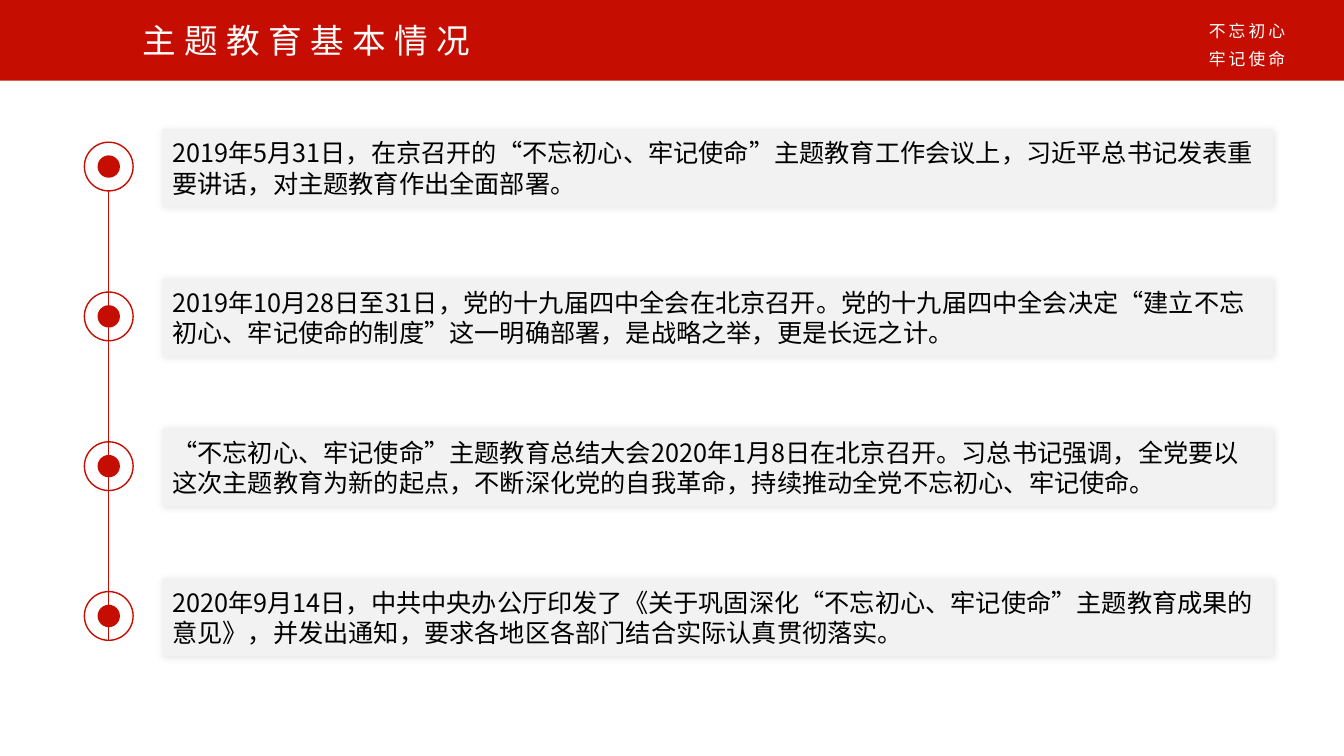
from lxml import etree
from pptx import Presentation
from pptx.dml.color import RGBColor
from pptx.enum.shapes import MSO_CONNECTOR, MSO_SHAPE
from pptx.enum.text import MSO_ANCHOR, MSO_AUTO_SIZE, PP_ALIGN
from pptx.oxml.ns import qn
from pptx.util import Pt

TITLE = "主题教育基本情况"
SLOGAN = ["不忘初心", "牢记使命"]
EVENTS = [
    "2019年5月31日，在京召开的“不忘初心、牢记使命”主题教育工作会议上，习近平总书记发表重要讲话，对主题教育作出全面部署。",
    "2019年10月28日至31日，党的十九届四中全会在北京召开。党的十九届四中全会决定“建立不忘初心、牢记使命的制度”这一明确部署，是战略之举，更是长远之计。",
    "“不忘初心、牢记使命”主题教育总结大会2020年1月8日在北京召开。习总书记强调，全党要以这次主题教育为新的起点，不断深化党的自我革命，持续推动全党不忘初心、牢记使命。",
    "2020年9月14日，中共中央办公厅印发了《关于巩固深化“不忘初心、牢记使命”主题教育成果的意见》，并发出通知，要求各地区各部门结合实际认真贯彻落实。",
]

FONT = "Noto Sans CJK SC"
RED = RGBColor(0xC5, 0x0E, 0x01)
GREY = RGBColor(0xF2, 0xF2, 0xF2)
WHITE = RGBColor(0xFF, 0xFF, 0xFF)
BLACK = RGBColor(0, 0, 0)
RECT, OVAL = MSO_SHAPE.RECTANGLE, MSO_SHAPE.OVAL
STRAIGHT = MSO_CONNECTOR.STRAIGHT
LEFT, MIDDLE, TOP = PP_ALIGN.LEFT, MSO_ANCHOR.MIDDLE, MSO_ANCHOR.TOP
NO_AUTOFIT = MSO_AUTO_SIZE.NONE

SLIDE_W, SLIDE_H = 960, 540
HEADER_H = 57.6
RING, DOT = 34.8, 16
AXIS_X = 77.7
CARD_X, CARD_W, CARD_H = 116, 793.5, 55.6
FIRST_Y, PITCH = 92.2, 107
RING_DY = 9.4  # ring top below card top


def write(sp, lines, size, color, spacing=0, line_height=None, anchor=MIDDLE):
    tf = sp.text_frame
    tf.word_wrap = True
    tf.auto_size = NO_AUTOFIT
    tf.vertical_anchor = anchor
    for i, line in enumerate(lines):
        p = tf.paragraphs[0] if i == 0 else tf.add_paragraph()
        p.alignment = LEFT
        if line_height:
            p.line_spacing = Pt(line_height)
        r = p.add_run()
        r.text = line
        r.font.size = Pt(size)
        r.font.color.rgb = color
        r.font.name = FONT
        rPr = r.font._element
        rPr.set("lang", "zh-CN")
        if spacing:
            rPr.set("spc", str(round(spacing * 100)))
        etree.SubElement(rPr, qn("a:ea")).set("typeface", FONT)


def add_shape(shapes, kind, x, y, w, h, fill=None, line=None):
    sp = shapes.add_shape(kind, Pt(x), Pt(y), Pt(w), Pt(h))
    sp.shadow.inherit = False
    if fill is None:
        sp.fill.background()
    else:
        sp.fill.solid()
        sp.fill.fore_color.rgb = fill
    if line is None:
        sp.line.fill.background()
    else:
        sp.line.color.rgb = line
        sp.line.width = Pt(1)
    return sp


def add_glow(sp):
    """Give the shape a faint shadow spreading evenly on all sides."""
    effects = sp._element.spPr.find(qn("a:effectLst"))
    shadow = etree.SubElement(effects, qn("a:outerShdw"), blurRad=str(Pt(5)),
                              dist="0", dir="0", algn="ctr", rotWithShape="0")
    color = etree.SubElement(shadow, qn("a:srgbClr"), val="000000")
    etree.SubElement(color, qn("a:alpha"), val="10000")


def add_header(s):
    bar = add_shape(s.shapes, RECT, 0, 0, SLIDE_W, HEADER_H, fill=RED)
    title = s.shapes.title
    title._element.addprevious(bar._element)
    title.left, title.top, title.width, title.height = Pt(94.5), Pt(10.8), Pt(361), Pt(36)
    write(title, [TITLE], 24, WHITE, spacing=6)

    slogan = s.shapes.add_textbox(Pt(863.5), Pt(9), Pt(70), Pt(40))
    tf = slogan.text_frame
    tf.margin_left = tf.margin_right = tf.margin_top = tf.margin_bottom = 0
    write(slogan, SLOGAN, 12, WHITE, spacing=2.2, line_height=20, anchor=TOP)


def add_timeline(s):
    ring_top = FIRST_Y + RING_DY
    last_bottom = ring_top + PITCH * (len(EVENTS) - 1) + RING
    axis = s.shapes.add_connector(STRAIGHT, Pt(AXIS_X), Pt(ring_top + RING),
                                  Pt(AXIS_X), Pt(last_bottom))
    axis.line.color.rgb = RED
    axis.line.width = Pt(0.5)
    etree.SubElement(axis._element.spPr, qn("a:effectLst"))

    for i, event in enumerate(EVENTS):
        y = FIRST_Y + i * PITCH
        center = y + RING_DY + RING / 2
        marker = s.shapes.add_group_shape()
        for size, fill, line in ((RING, None, RED), (DOT, RED, None)):
            add_shape(marker.shapes, OVAL, AXIS_X - size / 2, center - size / 2,
                      size, size, fill, line)
        card = add_shape(s.shapes, RECT, CARD_X, y, CARD_W, CARD_H, fill=GREY)
        add_glow(card)
        write(card, [event], 18, BLACK)


def main():
    prs = Presentation()
    prs.slide_width, prs.slide_height = Pt(SLIDE_W), Pt(SLIDE_H)
    s = prs.slides.add_slide(prs.slide_layouts[5])
    add_header(s)
    add_timeline(s)
    prs.save("out.pptx")


if __name__ == "__main__":
    main()
